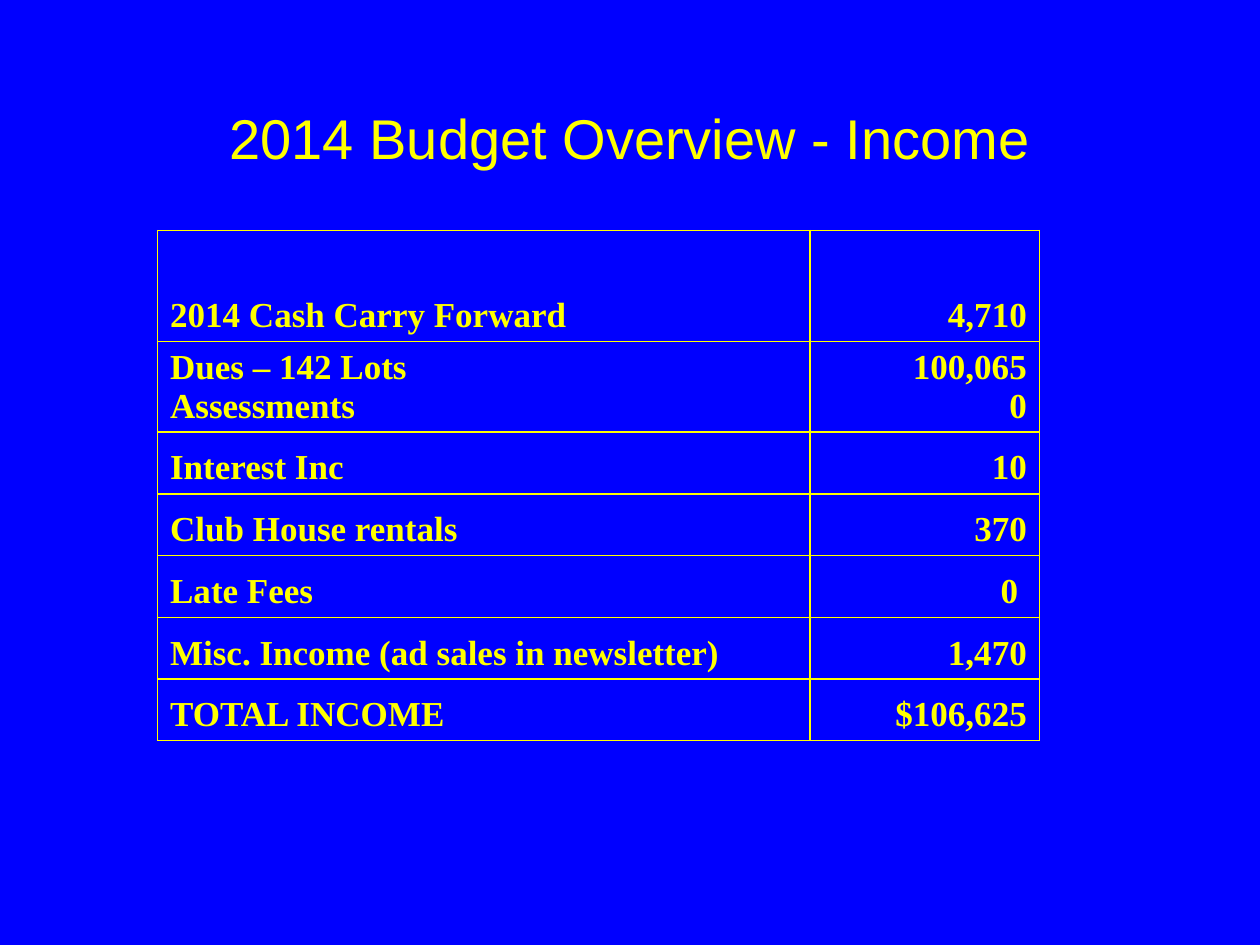
from dataclasses import dataclass

from lxml.etree import SubElement
from pptx import Presentation
from pptx.dml.color import RGBColor
from pptx.enum.text import MSO_ANCHOR, PP_ALIGN
from pptx.oxml.ns import qn
from pptx.util import Inches, Pt


@dataclass(frozen=True)
class Theme:
    background: str = "0000FF"
    accent: str = "FFFF00"
    title_font: str = "Arial"
    table_font: str = "Times New Roman"
    title_size: int = 32
    table_size: int = 20
    border_width: int = 1


THEME = Theme()

TITLE = "2014 Budget Overview - Income"
COLUMN_WIDTHS = (5.18, 1.82)
HANGING_INDENT = 0.38

# Label, amount and row height
INCOME_ROWS = [
    ("2014 Cash Carry Forward", "4,710", 0.88),
    ("Dues – 142 Lots\nAssessments", "100,065\n0", 0.72),
    ("Interest Inc", "10", 0.49),
    ("Club House rentals", "370", 0.49),
    ("Late Fees", "0 ", 0.49),
    ("Misc. Income (ad sales in newsletter)", "1,470", 0.49),
    ("TOTAL INCOME", "$106,625", 0.49),
]


def set_attributes(target, values):
    for name, value in values.items():
        setattr(target, name, value)


def format_font(font, name, size, bold):
    set_attributes(font, {"name": name, "size": Pt(size), "bold": bold})
    font.color.rgb = RGBColor.from_string(THEME.accent)


def add_title(slide):
    title = slide.shapes.title
    set_attributes(title, {
        "left": Inches(0.75), "top": Inches(0.67),
        "width": Inches(8.5), "height": Inches(0.83),
    })
    title.text_frame.text = TITLE
    set_attributes(title.text_frame, {
        "vertical_anchor": MSO_ANCHOR.MIDDLE, "word_wrap": True,
    })
    paragraph = title.text_frame.paragraphs[0]
    paragraph.alignment = PP_ALIGN.CENTER
    format_font(paragraph.runs[0].font, THEME.title_font, THEME.title_size, False)


def add_borders(cell):
    properties = cell._tc.get_or_add_tcPr()
    for side in ("lnL", "lnR", "lnT", "lnB"):
        line = SubElement(properties, qn(f"a:{side}"), w=str(Pt(THEME.border_width)))
        fill = SubElement(line, qn("a:solidFill"))
        SubElement(fill, qn("a:srgbClr"), val=THEME.accent)


def fill_cell(cell, text, alignment):
    add_borders(cell)
    cell.fill.background()
    cell.vertical_anchor = MSO_ANCHOR.BOTTOM
    cell.text_frame.text = text
    for paragraph in cell.text_frame.paragraphs:
        paragraph.alignment = alignment
        indent = Inches(HANGING_INDENT)
        paragraph_properties = paragraph._p.get_or_add_pPr()
        paragraph_properties.set("marL", str(indent))
        paragraph_properties.set("indent", str(-indent))
        format_font(paragraph.runs[0].font, THEME.table_font, THEME.table_size, True)


def add_income_table(slide):
    height = sum(row[2] for row in INCOME_ROWS)
    table = slide.shapes.add_table(
        len(INCOME_ROWS), len(COLUMN_WIDTHS),
        Inches(1.25), Inches(1.83), Inches(sum(COLUMN_WIDTHS)), Inches(height),
    ).table
    set_attributes(table, {"first_row": False, "horz_banding": False})
    for column, width in zip(table.columns, COLUMN_WIDTHS):
        column.width = Inches(width)
    for row, (label, amount, row_height) in zip(table.rows, INCOME_ROWS):
        row.height = Inches(row_height)
        fill_cell(row.cells[0], label, PP_ALIGN.LEFT)
        fill_cell(row.cells[1], amount, PP_ALIGN.RIGHT)


def main():
    presentation = Presentation()
    set_attributes(presentation, {
        "slide_width": Inches(10), "slide_height": Inches(7.5),
    })
    slide = presentation.slides.add_slide(presentation.slide_layouts[5])

    # Background
    slide.background.fill.solid()
    slide.background.fill.fore_color.rgb = RGBColor.from_string(THEME.background)

    # Title and income table
    add_title(slide)
    add_income_table(slide)

    presentation.save("out.pptx")


if __name__ == "__main__":
    main()
